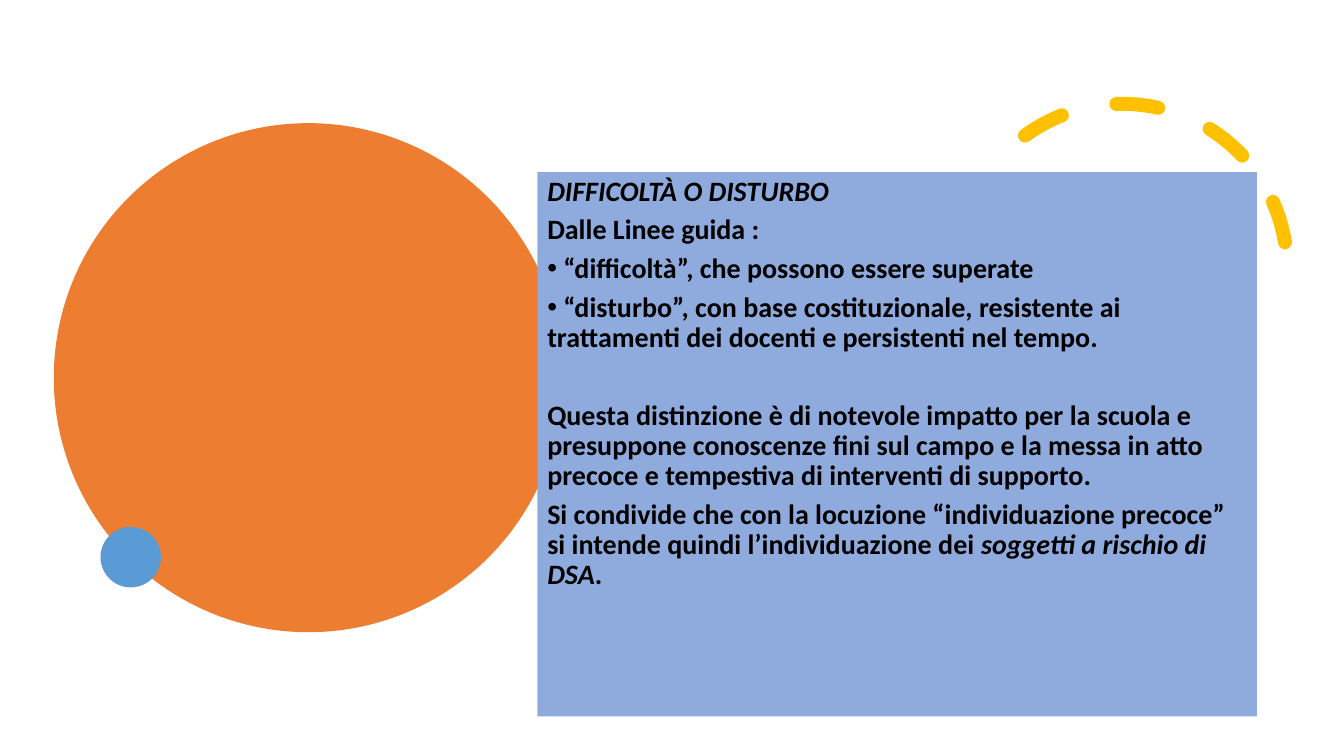
from lxml.etree import SubElement
from pptx import Presentation
from pptx.dml.color import RGBColor
from pptx.enum.dml import MSO_LINE_DASH_STYLE as Dash
from pptx.enum.shapes import MSO_SHAPE as Preset
from pptx.enum.text import MSO_ANCHOR as Anchor, PP_ALIGN as Align
from pptx.oxml.ns import qn
from pptx.util import Pt

PASSAGES = [
    ([("DIFFICOLTÀ O DISTURBO", True)], {}),
    ([("Dalle Linee guida :", False)], {}),
    ([(" “difficoltà”, che possono essere superate", False)], {"bullet": True}),
    ([(" “disturbo”, con base costituzionale, resistente ai trattamenti dei "
       "docenti e persistenti nel tempo.", False)], {"bullet": True, "after": 34}),
    ([("Questa distinzione è di notevole impatto per la scuola e presuppone "
       "conoscenze fini sul campo e la messa in atto precoce e tempestiva di "
       "interventi di supporto.", False)], {}),
    ([("Si condivide che con la locuzione “individuazione precoce” si intende "
       "quindi l’individuazione dei ", False),
      ("soggetti a rischio di DSA", True), (".", False)], {}),
]


def color(value):
    return RGBColor.from_string(value)


def add_span(para, text, font="Calibri", size=20, ink="000000", bold=True, italic=False):
    span = para.add_run()
    span.text = text
    span.font.name = font
    span.font.size = Pt(size)
    span.font.color.rgb = color(ink)
    span.font.bold = bold
    span.font.italic = italic


class SlideBuilder:
    """Hold the palette and the current slide, and add its elements."""

    orange, yellow, blue, panel_blue = "ED7D31", "FFC000", "5B9BD5", "8FAADC"

    def __init__(self, page):
        self.page = page

    def shape(self, preset, left, top, width, height, fill=None):
        shape = self.page.shapes.add_shape(preset, Pt(left), Pt(top), Pt(width), Pt(height))
        shape.shadow.inherit = False
        shape.line.fill.background()
        if fill:
            shape.fill.solid()
            shape.fill.fore_color.rgb = color(fill)
        else:
            shape.fill.background()
        return shape

    def circle(self, left, top, diameter, fill):
        return self.shape(Preset.OVAL, left, top, diameter, diameter, fill)

    def dashed_arc(self, left, top, diameter, start, end, rotation, weight):
        arc = self.shape(Preset.ARC, left, top, diameter, diameter)
        arc.adjustments[0] = start
        arc.adjustments[1] = end
        arc.rotation = rotation
        arc.line.color.rgb = color(self.yellow)
        arc.line.width = Pt(weight)
        arc.line.dash_style = Dash.DASH
        arc.line._get_or_add_ln().set("cap", "rnd")

    def text_panel(self, left, top, width, height, passages):
        panel = self.shape(Preset.RECTANGLE, left, top, width, height, self.panel_blue)
        frame = panel.text_frame
        frame.word_wrap = True
        frame.vertical_anchor = Anchor.TOP
        for index, (spans, layout) in enumerate(passages):
            para = frame.add_paragraph() if index else frame.paragraphs[0]
            self.format_paragraph(para, **layout)
            for text, italic in spans:
                add_span(para, text, italic=italic)

    def format_paragraph(self, para, bullet=False, after=6):
        para.alignment = Align.LEFT
        para.line_spacing = 0.9
        para.space_after = Pt(after)
        if bullet:
            properties = para._p.get_or_add_pPr()
            properties.set("marL", "0")
            properties.set("indent", str(-Pt(18)))
            SubElement(properties, qn("a:buFont")).set("typeface", "Arial")
            SubElement(properties, qn("a:buChar")).set("char", "•")


def main():
    deck = Presentation()
    deck.slide_width, deck.slide_height = Pt(960), Pt(540)
    builder = SlideBuilder(deck.slides.add_slide(deck.slide_layouts[6]))
    builder.circle(38.4, 88, 363.6, builder.orange)
    builder.dashed_arc(684, 74.2, 235.4, start=158.17, end=17.81, rotation=330.2, weight=10)
    builder.circle(71.8, 376.4, 43.2, builder.blue)
    builder.text_panel(383.8, 123, 514, 388.8, PASSAGES)
    deck.save("out.pptx")


if __name__ == "__main__":
    main()
